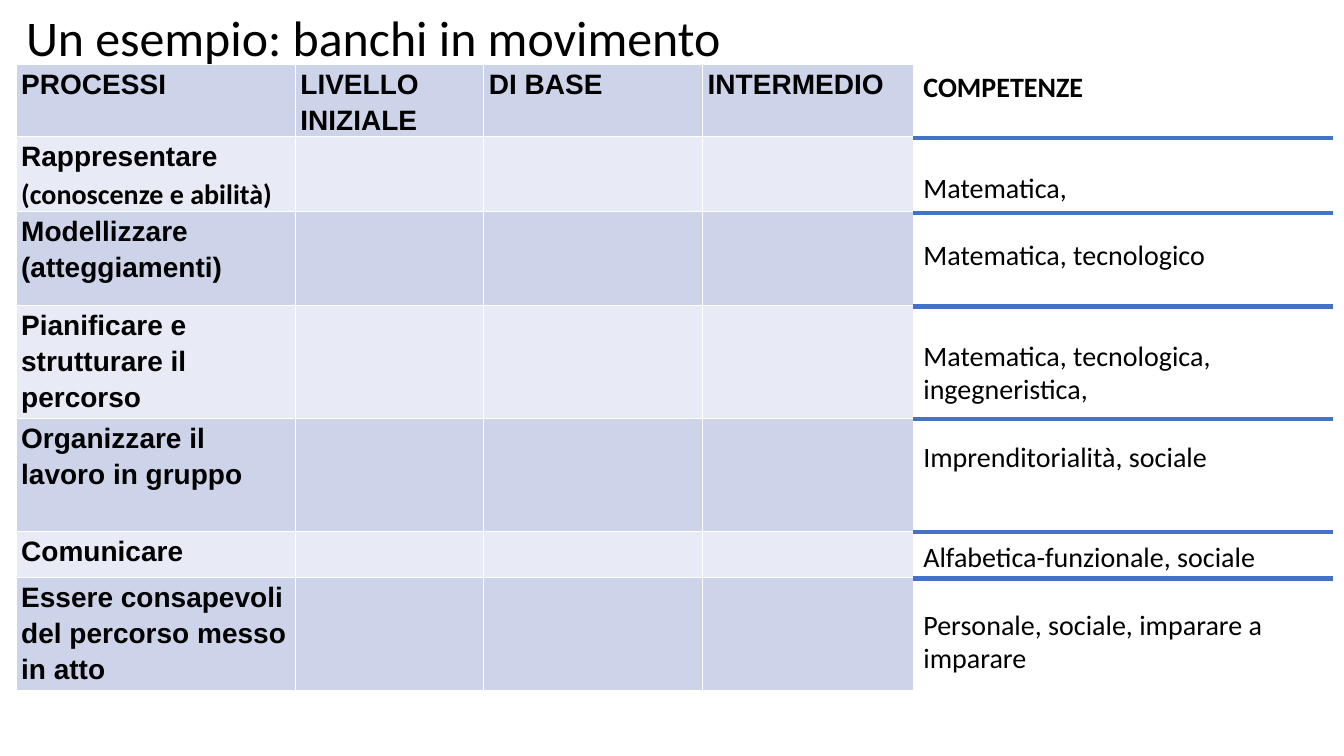
"""Build the slide that maps learning processes to levels and competences."""
from itertools import accumulate

from lxml import etree
from pptx import Presentation
from pptx import util as u
from pptx.dml.color import RGBColor
from pptx.enum import shapes, text
from pptx.oxml import ns

BLACK = RGBColor(0, 0, 0)
WHITE = RGBColor(255, 255, 255)
BLUE = RGBColor(0x44, 0x72, 0xC4)
BANDS = [RGBColor(0xCD, 0xD4, 0xEA), RGBColor(0xE8, 0xEB, 0xF5)]

LEFT, TOP, RIGHT = 0.16, 0.64, 13.22
COLUMNS = [2.77, 1.87, 2.17, 2.09]
ROWS = [0.71, 0.74, 0.93, 1.12, 1.12, 0.46, 1.12]
SPLIT = LEFT + sum(COLUMNS)
LINE_PITCH = 24

HEADERS = ["PROCESSI", "LIVELLO INIZIALE", "DI BASE", "INTERMEDIO"]
PROCESSES = [
    "Rappresentare",
    "Modellizzare (atteggiamenti)",
    "Pianificare e strutturare il percorso",
    "Organizzare il lavoro in gruppo",
    "Comunicare",
    "Essere consapevoli del percorso messo in atto",
]
COMPETENCES = [
    ("COMPETENZE", 0),
    ("Matematica,", 2),
    ("Matematica, tecnologico", 1),
    ("Matematica, tecnologica, ingegneristica,", 2),
    ("Imprenditorialità, sociale", 1),
    ("Alfabetica-funzionale, sociale", 2),
    ("Personale, sociale, imparare a imparare", 1),
]


def write(paragraph, words, size, name, bold=False):
    paragraph.text = words
    font = paragraph.font
    font.size, font.name, font.bold = u.Pt(size), name, bold
    font.color.rgb = BLACK


def draw_borders(cell):
    properties = cell._tc.get_or_add_tcPr()
    for index, side in enumerate(("lnL", "lnR", "lnT", "lnB")):
        border = etree.Element(ns.qn(f"a:{side}"), w=str(u.Pt(1)))
        fill = etree.SubElement(border, ns.qn("a:solidFill"))
        etree.SubElement(fill, ns.qn("a:srgbClr"), val=str(WHITE))
        properties.insert(index, border)


presentation = Presentation()
presentation.slide_width = u.Inches(13.33)
presentation.slide_height = u.Inches(7.5)
slide = presentation.slides.add_slide(presentation.slide_layouts[6])

table = slide.shapes.add_table(
    len(ROWS), len(COLUMNS), u.Inches(LEFT), u.Inches(TOP),
    u.Inches(sum(COLUMNS)), u.Inches(sum(ROWS))).table
for column, width in zip(table.columns, COLUMNS):
    column.width = u.Inches(width)
for row, height in zip(table.rows, ROWS):
    row.height = u.Inches(height)

labels = [HEADERS] + [[process] for process in PROCESSES]
for row_index, row in enumerate(table.rows):
    for column_index, cell in enumerate(row.cells):
        cell.fill.solid()
        cell.fill.fore_color.rgb = BANDS[row_index % 2]
        draw_borders(cell)
        if column_index < len(labels[row_index]):
            cell.margin_left = cell.margin_right = u.Inches(0.05)
            cell.margin_top = cell.margin_bottom = 0
            paragraph = cell.text_frame.paragraphs[0]
            write(paragraph, labels[row_index][column_index], 20, "Arial", True)
            paragraph.line_spacing = 1.15

detail_paragraph = table.cell(1, 0).text_frame.paragraphs[0]
detail_paragraph.add_line_break()
detail = detail_paragraph.add_run()
detail.text = "(conoscenze e abilità)"
detail.font.name = "Calibri"

panel = slide.shapes.add_shape(
    shapes.MSO_SHAPE.RECTANGLE, u.Inches(SPLIT), u.Inches(TOP),
    u.Inches(4.17), u.Inches(6.5))
panel.shadow.inherit = False
panel.fill.solid()
panel.fill.fore_color.rgb = WHITE
panel.line.fill.background()
frame = panel.text_frame
frame.word_wrap = True
frame.vertical_anchor = text.MSO_ANCHOR.TOP
for index, (competence, gap) in enumerate(COMPETENCES):
    paragraph = frame.add_paragraph() if index else frame.paragraphs[0]
    write(paragraph, competence, 20, "Calibri", index == 0)
    paragraph.alignment = text.PP_ALIGN.LEFT
    paragraph.space_before = u.Pt(gap * LINE_PITCH)

for bottom in list(accumulate(ROWS))[:-1]:
    y = u.Inches(TOP + bottom + 0.02)
    divider = slide.shapes.add_connector(
        shapes.MSO_CONNECTOR.STRAIGHT, u.Inches(SPLIT), y, u.Inches(RIGHT), y)
    divider.line.color.rgb = BLUE
    divider.line.width = u.Pt(3)
    etree.SubElement(divider._element.spPr, ns.qn("a:effectLst"))

title = slide.shapes.add_textbox(
    u.Inches(LEFT), u.Inches(0.2), u.Inches(11.5), u.Inches(0.4))
title.text_frame.word_wrap = True
title.text_frame.vertical_anchor = text.MSO_ANCHOR.MIDDLE
heading = title.text_frame.paragraphs[0]
write(heading, "Un esempio: banchi in movimento", 35.6, "Calibri")
heading.line_spacing = 0.9

presentation.save("out.pptx")
